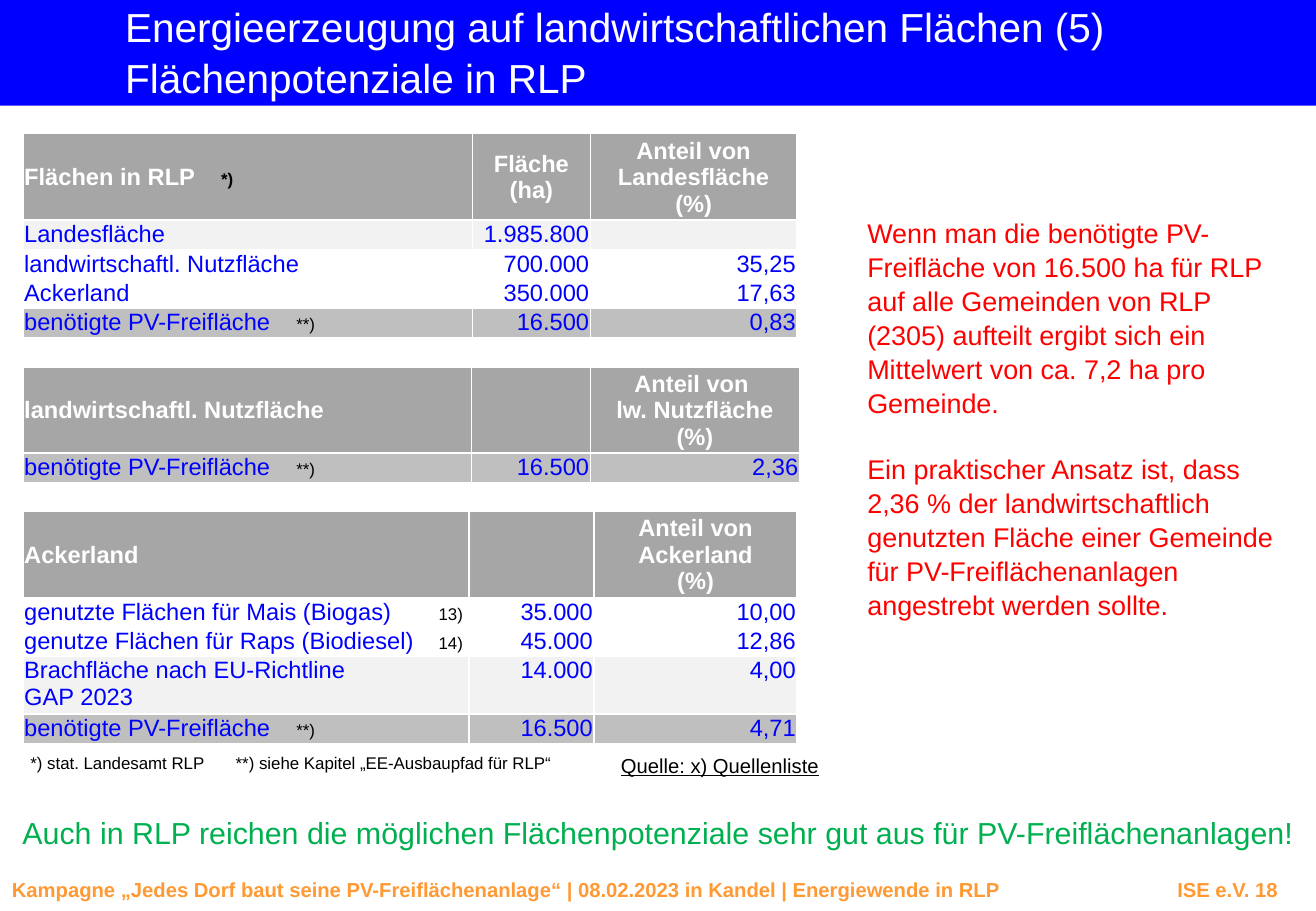
from lxml import etree
from pptx import Presentation, util as u
from pptx.dml.color import RGBColor
from pptx.enum import shapes, text
from pptx.oxml.ns import qn

WIDTH, HEIGHT = u.Inches(10.83), u.Inches(7.5)
BLUE, WHITE, BLACK, RED = "0000FF", "FFFFFF", "000000", "FF0000"
GREEN, ORANGE = "00B050", "FF9933"
HEAD, NEED, PALE = "A6A6A6", "BFBFBF", "F2F2F2"
LEFT, RIGHT, CENTER = text.PP_ALIGN.LEFT, text.PP_ALIGN.RIGHT, text.PP_ALIGN.CENTER

# All places and lengths are percentages of the slide's width and height.
BANNER = (0, 0, 100, 11.6)
TABLE_LEFT, HEAD_ROW, ROW = 1.75, 9.47, 3.2
NOTE_TABS = (14.96, 20.68, 31.49)
FOOTER_TABS = (96.2,)
NEEDED = "benötigte PV-Freifläche\t**)"

# top, column widths, rows of (fill, cells)
TABLES = [
    (14.67, (34.16, 8.96, 15.7), [
        (HEAD, ("Flächen in RLP\t*)", "Fläche\n(ha)", "Anteil von Landesfläche\n(%)")),
        (PALE, ("Landesfläche", "1.985.800", "")),
        (WHITE, ("landwirtschaftl. Nutzfläche", "700.000", "35,25")),
        (WHITE, ("Ackerland", "350.000", "17,63")),
        (NEED, (NEEDED, "16.500", "0,83"))]),
    (40.27, (34.07, 9.05, 15.88), [
        (HEAD, ("landwirtschaftl. Nutzfläche", "", "Anteil von \nlw. Nutzfläche\n(%)")),
        (NEED, (NEEDED, "16.500", "2,36"))]),
    (56.13, (33.89, 9.51, 15.42), [
        (HEAD, ("Ackerland", "", "Anteil von Ackerland\n(%)")),
        (WHITE, ("genutzte Flächen für Mais (Biogas)\t13)", "35.000", "10,00")),
        (WHITE, ("genutze Flächen für Raps (Biodiesel)\t14)", "45.000", "12,86")),
        (PALE, ("Brachfläche nach EU-Richtline\nGAP 2023", "14.000", "4,00")),
        (NEED, (NEEDED, "16.500", "4,71"))]),
]

# place, inset in inches, wraps, alignment, tab stops, font, paragraphs
BOXES = [
    ((0, 95.47, 100, 4), (0.1, 0.05), True, LEFT, FOOTER_TABS,
     dict(size=12, color=ORANGE, bold=True),
     ["Kampagne „Jedes Dorf baut seine PV-Freiflächenanlage“ | 08.02.2023 in Kandel"
      " | Energiewende in RLP\tISE e.V. 18"]),
    ((9.51, 0, 75.25, 10.8), (0, 0), False, LEFT, (), dict(size=24, color=WHITE),
     ["Energieerzeugung auf landwirtschaftlichen Flächen (5)\nFlächenpotenziale in RLP"]),
    ((47.18, 82.53, 15.6, 2.67), (0, 0), False, LEFT, (),
     dict(size=12, color=BLACK, underline=True), ["Quelle: x) Quellenliste"]),
    ((65, 22.93, 33.24, 44.4), (0.1, 0.05), True, LEFT, (), dict(size=16, color=RED),
     ["Wenn man die benötigte PV-Freifläche von 16.500 ha für RLP auf alle Gemeinden "
      "von RLP (2305) aufteilt ergibt sich ein Mittelwert von ca. 7,2 ha pro Gemeinde.",
      "Ein praktischer Ansatz ist, dass\n2,36 % der landwirtschaftlich genutzten Fläche "
      "einer Gemeinde für PV-Freiflächenanlagen angestrebt werden sollte."]),
    ((0, 88.27, 100, 5.87), (0.07, 0.07), True, CENTER, (), dict(size=18, color=GREEN),
     ["Auch in RLP reichen die möglichen Flächenpotenziale sehr gut aus für "
      "PV-Freiflächenanlagen!"]),
    ((17.91, 82.53, 24.1, 2.27), (0, 0), True, LEFT, (), dict(size=10, color=BLACK),
     ["**) siehe Kapitel „EE-Ausbaupfad für RLP“"]),
    ((2.31, 82.53, 14, 2.27), (0, 0), True, LEFT, (), dict(size=10, color=BLACK),
     ["*) stat. Landesamt RLP"]),
]


def rgb(value):
    return RGBColor.from_string(value)


def across(share):
    return round(WIDTH * share / 100)


def down(share):
    return round(HEIGHT * share / 100)


def place(x, y, w, h):
    return across(x), down(y), across(w), down(h)


def paint(sp, color):
    sp.fill.solid()
    sp.fill.fore_color.rgb = rgb(color)


def add_tabs(p, stops, align):
    tabs = etree.SubElement(p._p.get_or_add_pPr(), qn("a:tabLst"))
    for stop in stops:
        etree.SubElement(tabs, qn("a:tab"), pos=str(across(stop)), algn=align)


def add_run(p, content, size, color, **style):
    """Write content into p; a newline becomes a line break of the same size."""
    for i, line in enumerate(content.split("\n")):
        if i:
            p.add_line_break()
            etree.SubElement(p._p[-1], qn("a:rPr"), sz=str(size * 100))
        r = p.add_run()
        r.text = line
        r.font.color.rgb = rgb(color)
        for name, value in dict(style, name="Arial", size=u.Pt(size)).items():
            setattr(r.font, name, value)


def add_box(s, at, inset, wraps, align, stops, font, paragraphs):
    tf = s.shapes.add_textbox(*place(*at)).text_frame
    tf.word_wrap = wraps
    tf.margin_left = tf.margin_right = u.Inches(inset[0])
    tf.margin_top = tf.margin_bottom = u.Inches(inset[1])
    for i, content in enumerate(paragraphs):
        p = tf.add_paragraph() if i else tf.paragraphs[0]
        p.alignment, p.line_spacing = align, 1.05
        if i:
            p.space_before = u.Pt(font["size"] * 1.2)
        if stops:
            add_tabs(p, stops, "r")
        add_run(p, content, **font)


def add_borders(cell):
    for side in ("lnL", "lnR", "lnT", "lnB"):
        ln = etree.SubElement(cell._tc.get_or_add_tcPr(), qn("a:" + side), w=str(u.Pt(1)))
        fill = etree.SubElement(ln, qn("a:solidFill"))
        etree.SubElement(fill, qn("a:srgbClr"), val=WHITE)


def fill_cell(cell, content, col, fill):
    head = fill == HEAD
    add_borders(cell)
    paint(cell, fill)
    cell.margin_left = cell.margin_right = cell.margin_top = u.Inches(0.01)
    cell.margin_bottom = 0
    cell.vertical_anchor = text.MSO_ANCHOR.MIDDLE if head else text.MSO_ANCHOR.TOP
    p = cell.text_frame.paragraphs[0]
    p.alignment = LEFT if col == 0 else CENTER if head else RIGHT
    if not content:
        p._p.get_or_add_endParaRPr().set("sz", "1400")
        return
    label, tab, note = content.partition("\t")
    if tab:
        add_tabs(p, NOTE_TABS, "l")
    add_run(p, label, 14, WHITE if head else BLUE, bold=head)
    if tab:
        add_run(p, tab + note, 10, BLACK, bold=head)


def add_area_table(s, top, widths, rows):
    heights = [HEAD_ROW if fill == HEAD else ROW * (1 + cells[0].count("\n"))
               for fill, cells in rows]
    at = place(TABLE_LEFT, top, sum(widths), sum(heights))
    table = s.shapes.add_table(len(rows), len(widths), *at).table
    for column, width in zip(table.columns, widths):
        column.width = across(width)
    for i, (fill, cells) in enumerate(rows):
        table.rows[i].height = down(heights[i])
        for col, content in enumerate(cells):
            fill_cell(table.cell(i, col), content, col, fill)


prs = Presentation()
prs.slide_width, prs.slide_height = WIDTH, HEIGHT
s = prs.slides.add_slide(prs.slide_layouts[6])

banner = s.shapes.add_shape(shapes.MSO_SHAPE.RECTANGLE, *place(*BANNER))
banner.shadow.inherit = False
banner.line.fill.background()
paint(banner, BLUE)

for area_table in TABLES:
    add_area_table(s, *area_table)
for box in BOXES:
    add_box(s, *box)

prs.save("out.pptx")
